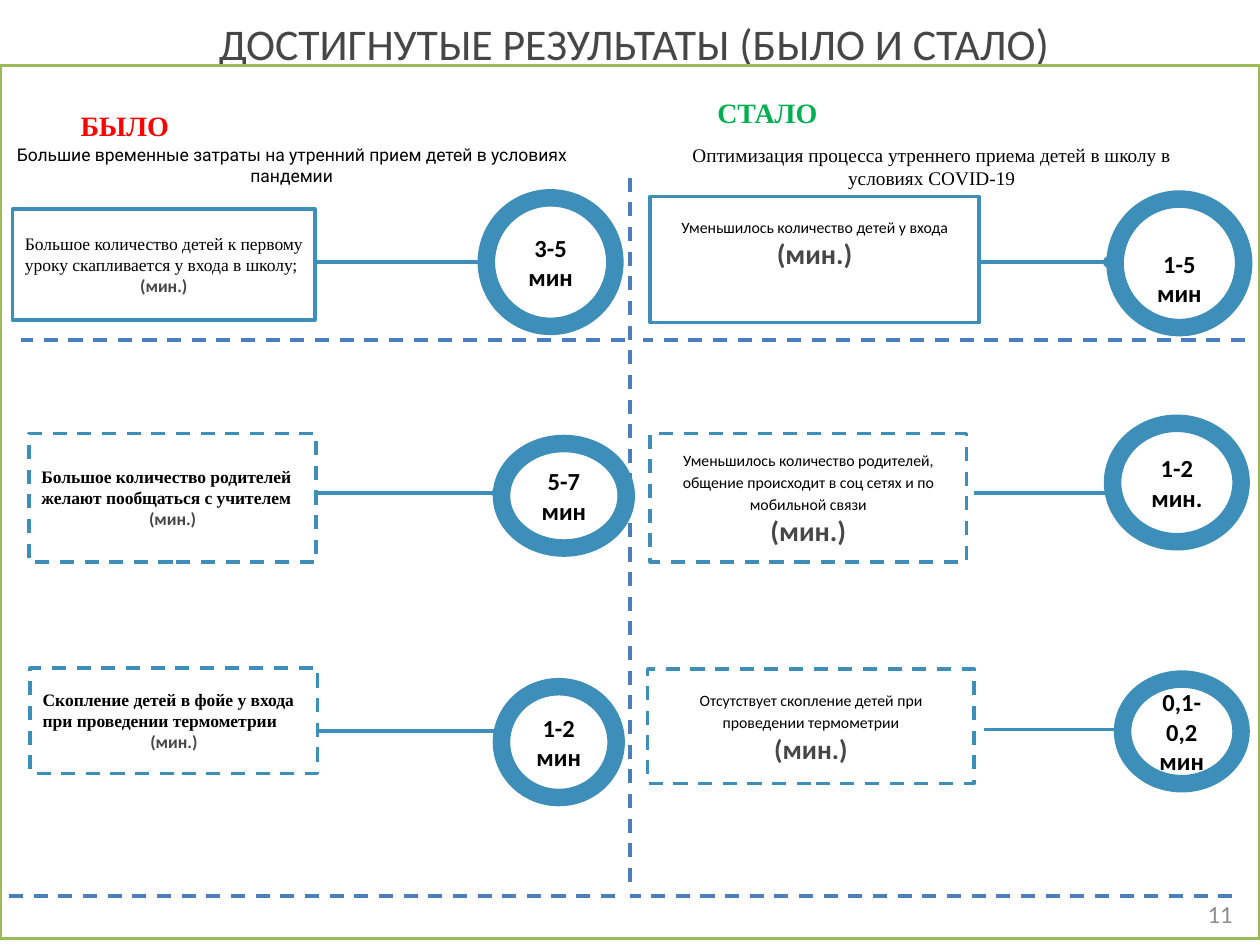
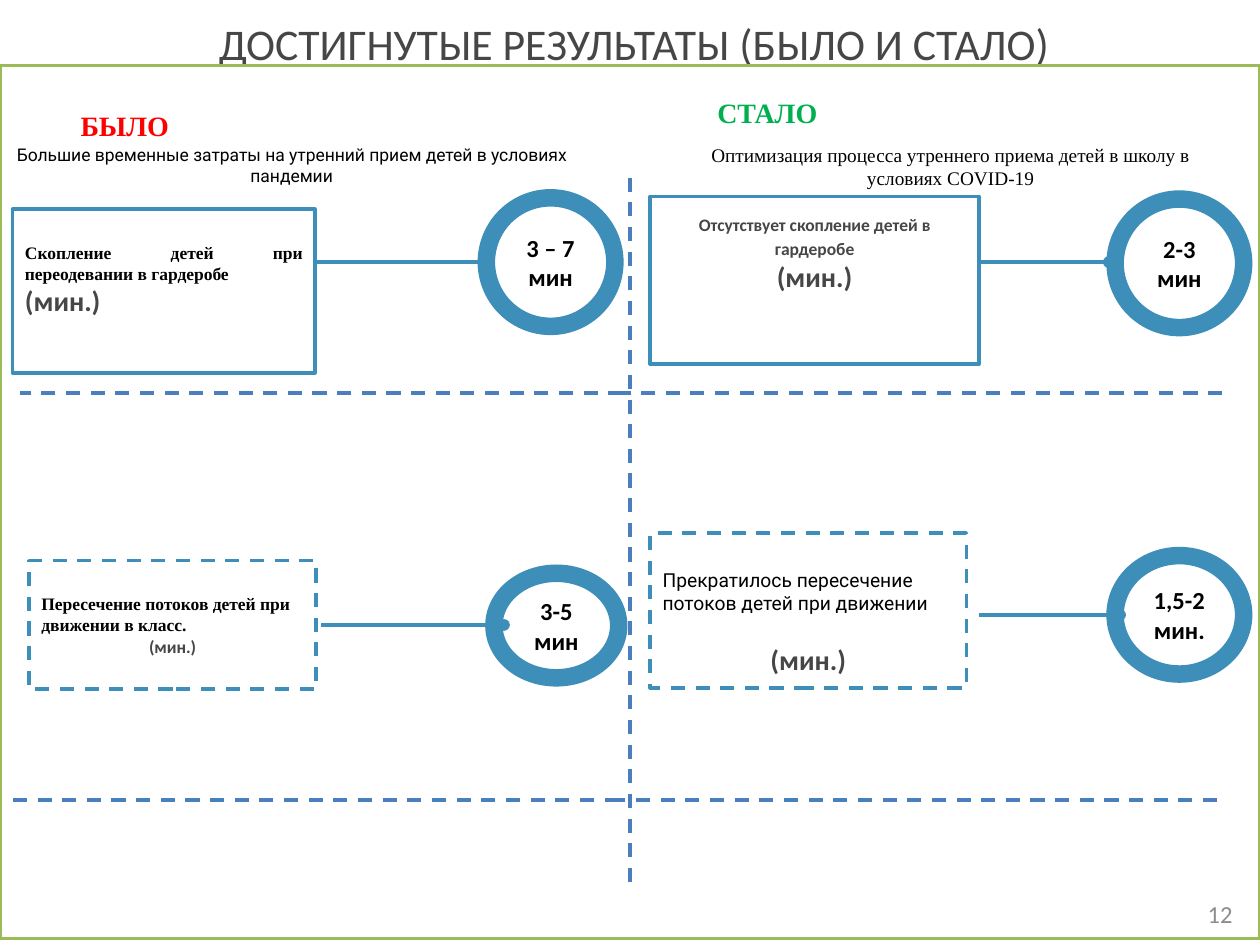
from dataclasses import dataclass, field

import pptx
import pptx.util
from lxml import etree
from pptx.dml.color import RGBColor
from pptx.enum.dml import MSO_LINE
from pptx.enum.shapes import MSO_CONNECTOR, MSO_SHAPE
from pptx.enum.text import MSO_ANCHOR, MSO_AUTO_SIZE, PP_ALIGN
from pptx.oxml.ns import qn

Inches = pptx.util.Inches
Pt = pptx.util.Pt

WHITE = RGBColor(0xFF, 0xFF, 0xFF)
BLACK = RGBColor(0x00, 0x00, 0x00)
DARK = RGBColor(0x46, 0x46, 0x46)
GREY = RGBColor(0x8C, 0x8C, 0x8C)
BLUE = RGBColor(0x3D, 0x8E, 0xB9)
DIVIDER = RGBColor(0x4B, 0x7E, 0xBC)
FRAME = RGBColor(0x9B, 0xBB, 0x59)
RED = RGBColor(0xFF, 0x00, 0x00)
GREEN = RGBColor(0x00, 0xB0, 0x50)

SANS = "Calibri"
SERIF = "Times New Roman"
ROBOTO = "Roboto"

TITLE = "ДОСТИГНУТЫЕ РЕЗУЛЬТАТЫ (БЫЛО И СТАЛО)"
BEFORE_NOTE = "Большие временные затраты на утренний прием детей в условиях пандемии"
AFTER_NOTE = "Оптимизация процесса утреннего приема детей в школу в условиях COVID-19"
UNIT = "(мин.)"

SERIF_BOLD = dict(size=10, font=SERIF, bold=True)
SMALL = dict(size=9, align=PP_ALIGN.CENTER, spacing=1.15)
UNIT_SMALL = dict(size=10, color=DARK, bold=True, align=PP_ALIGN.CENTER)
UNIT_LARGE = dict(UNIT_SMALL, size=16)


@dataclass
class Step:
    """Boxes are left, top, width, height; link is start, end, top."""
    card: tuple
    link: tuple
    ring: tuple
    text: str
    time: str
    style: dict
    unit: dict = field(default_factory=lambda: UNIT_LARGE)
    pad_top: float = 0
    pad_bottom: float = 0
    ring_pad: float = 0
    first: bool = False


def write(frame, text, size=10, font=SANS, color=BLACK, bold=False,
          align=PP_ALIGN.LEFT, spacing=None, before=0):
    for line in text.split("\n"):
        para = frame.add_paragraph() if frame.text else frame.paragraphs[0]
        para.alignment = align
        para.space_before = Pt(before)
        if spacing:
            para.line_spacing = spacing
        span = para.add_run()
        span.text = line
        span.font.size = Pt(size)
        span.font.name = font
        span.font.bold = bold
        span.font.color.rgb = color


def set_frame(shape, anchor=MSO_ANCHOR.MIDDLE, pad_top=0, pad_bottom=0):
    frame = shape.text_frame
    frame.word_wrap = True
    frame.vertical_anchor = anchor
    frame.margin_left = frame.margin_right = Inches(0.1)
    frame.margin_top = Inches(0.05 + pad_top)
    frame.margin_bottom = Inches(0.05 + pad_bottom)
    return frame


def add_label(page, box, text, anchor=MSO_ANCHOR.MIDDLE, grow=False, **style):
    label = page.shapes.add_textbox(*map(Inches, box))
    frame = set_frame(label, anchor)
    write(frame, text, **style)
    if grow:
        frame.auto_size = MSO_AUTO_SIZE.SHAPE_TO_FIT_TEXT


def add_outline(page, kind, box, color, width, fill=None, dashed=False):
    shape = page.shapes.add_shape(kind, *map(Inches, box))
    shape.shadow.inherit = False
    if fill is None:
        shape.fill.background()
    else:
        shape.fill.solid()
        shape.fill.fore_color.rgb = fill
    shape.line.color.rgb = color
    shape.line.width = Pt(width)
    if dashed:
        shape.line.dash_style = MSO_LINE.DASH
    return shape


def add_line(page, start, end, color, width, dashed=False, oval=False):
    line = page.shapes.add_connector(
        MSO_CONNECTOR.STRAIGHT, *map(Inches, start + end))
    line.line.color.rgb = color
    line.line.width = Pt(width)
    if dashed:
        line.line.dash_style = MSO_LINE.DASH
    if oval:
        etree.SubElement(line.line._get_or_add_ln(), qn("a:tailEnd"), type="oval")
    etree.SubElement(line._element.spPr, qn("a:effectLst"))


def add_step(page, left, top, step):
    def shift(box):
        return (left + box[0], top + box[1]) + box[2:]

    ring = add_outline(page, MSO_SHAPE.FLOWCHART_CONNECTOR, shift(step.ring),
                       BLUE, 10, fill=WHITE)
    write(set_frame(ring, pad_top=step.ring_pad), step.time, size=14, bold=True,
          align=PP_ALIGN.CENTER)
    start, end, height = step.link
    add_line(page, shift((start, height)), shift((end, height)), BLUE, 2.25, oval=True)
    card = add_outline(page, MSO_SHAPE.RECTANGLE, shift(step.card), BLUE, 2,
                       fill=WHITE if step.first else None, dashed=not step.first)
    frame = set_frame(card, pad_top=step.pad_top, pad_bottom=step.pad_bottom)
    write(frame, step.text, **step.style)
    write(frame, UNIT, **step.unit)


def add_heading(page, box, text, color):
    add_label(page, box, text, MSO_ANCHOR.TOP, True, size=16, font=SERIF,
              color=color, bold=True, align=PP_ALIGN.CENTER)


def add_note(page, box, text, size, font):
    add_label(page, box, text, MSO_ANCHOR.TOP, True, size=size, font=font,
              align=PP_ALIGN.CENTER)


def add_dividers(page, dividers):
    add_line(page, (5, 1.41), (5, 7.07), DIVIDER, 2, dashed=True)
    for right, left, top in dividers:
        add_line(page, (right, top), (left, top), DIVIDER, 2, dashed=True)


def build_results(deck, number, note_left, dividers, rows):
    page = deck.slides.add_slide(deck.slide_layouts[6])
    add_dividers(page, dividers)
    add_label(page, (0.08, -0.08, 9.9, 0.84), TITLE, size=25, color=DARK,
              align=PP_ALIGN.CENTER)
    for top, before, after in rows:
        add_step(page, 0, top, before)
        add_step(page, 5, top, after)
    add_outline(page, MSO_SHAPE.RECTANGLE, (0, 0.52, 10, 6.93), FRAME, 2)
    add_label(page, (9.4, 7.05, 0.48, 0.4), str(number), size=14, color=GREY,
              align=PP_ALIGN.RIGHT)
    add_heading(page, (0.27, 0.81, 1.44, 0.37), "БЫЛО", RED)
    add_heading(page, (5.39, 0.71, 1.4, 0.37), "СТАЛО", GREEN)
    add_note(page, (0, 1.09, 4.63, 0.44), BEFORE_NOTE, 10, ROBOTO)
    add_note(page, (note_left, 1.09, 4.63, 0.47), AFTER_NOTE, 11, SERIF)


FIRST_BEFORE = dict(link=(2.43, 3.86, 0.58), ring=(3.86, 0.07, 1.02, 1.02), first=True)
FIRST_AFTER = dict(link=(2.67, 3.8, 0.58), ring=(3.85, 0.08, 1.02, 1.02), first=True)

ARRIVAL_ROWS = [
    (1.5,
     Step(card=(0.1, 0.16, 2.4, 0.88), time="3-5\nмин",
          text="Большое количество детей к первому уроку скапливается у входа в школу;",
          style=dict(size=10, font=SERIF), unit=UNIT_SMALL, **FIRST_BEFORE),
     Step(card=(0.16, 0.06, 2.61, 1), time="1-5\nмин",
          text="Уменьшилось количество детей у входа",
          style=SMALL, pad_bottom=0.27, ring_pad=0.24, **FIRST_AFTER)),
    (3.3,
     Step(card=(0.23, 0.14, 2.28, 1.02), link=(2.5, 3.95, 0.61),
          ring=(3.98, 0.22, 0.99, 0.83), time="5-7 мин",
          text="Большое количество родителей желают пообщаться с учителем",
          style=SERIF_BOLD, unit=UNIT_SMALL),
     Step(card=(0.16, 0.14, 2.51, 1.02), link=(2.73, 3.85, 0.61),
          ring=(3.83, 0.06, 1.02, 0.94), time="1-2\nмин.",
          text="Уменьшилось количество родителей, общение происходит "
               "в соц сетях и по мобильной связи",
          style=SMALL)),
    (5.2,
     Step(card=(0.24, 0.1, 2.28, 0.84), link=(2.52, 3.97, 0.6),
          ring=(3.98, 0.25, 0.91, 0.88), time="1-2\nмин",
          text="Скопление детей в фойе у входа при проведении термометрии",
          style=SERIF_BOLD, unit=UNIT_SMALL),
     Step(card=(0.14, 0.11, 2.59, 0.91), link=(2.81, 3.92, 0.59),
          ring=(3.91, 0.19, 0.94, 0.83), time="0,1-0,2\nмин",
          text="Отсутствует скопление детей при проведении термометрии",
          style=SMALL, unit=dict(UNIT_LARGE, size=15.5))),
]

CLOAKROOM_ROWS = [
    (1.5,
     Step(card=(0.1, 0.16, 2.4, 1.3), time="3 – 7 мин",
          text="Скопление детей при переодевании в гардеробе",
          style=dict(SERIF_BOLD, align=PP_ALIGN.JUSTIFY),
          unit=dict(UNIT_LARGE, align=PP_ALIGN.JUSTIFY),
          pad_bottom=0.18, **FIRST_BEFORE),
     Step(card=(0.16, 0.06, 2.61, 1.33), time="2-3\nмин",
          text="Отсутствует скопление детей в гардеробе",
          style=dict(UNIT_SMALL, spacing=1.15), pad_bottom=0.45, **FIRST_AFTER)),
    (4.2,
     Step(card=(0.23, 0.25, 2.28, 1.02), link=(2.55, 4, 0.76),
          ring=(3.92, 0.35, 0.99, 0.83), time="3-5 мин",
          text="Пересечение потоков детей при движении в класс.",
          style=SERIF_BOLD, unit=UNIT_SMALL),
     Step(card=(0.16, 0.03, 2.51, 1.23), link=(2.77, 3.89, 0.68),
          ring=(3.85, 0.21, 1.02, 0.94), time="1,5-2\nмин.",
          text="Прекратилось пересечение потоков детей при движении",
          style=dict(size=11, font=ROBOTO), unit=dict(UNIT_LARGE, before=16),
          pad_top=0.18)),
]


def main():
    deck = pptx.Presentation()
    deck.slide_width = Inches(10)
    deck.slide_height = Inches(7.5)
    build_results(deck, 11, 5.08,
                  [(4.96, 0.17, 2.7), (9.88, 5.1, 2.7),
                   (4.88, 0, 7.11), (9.78, 5, 7.11)],
                  ARRIVAL_ROWS)
    build_results(deck, 12, 5.23,
                  [(4.94, 0.16, 3.12), (9.7, 4.92, 3.12),
                   (4.91, 0.03, 6.35), (9.66, 4.88, 6.35)],
                  CLOAKROOM_ROWS)
    deck.save("out.pptx")


if __name__ == "__main__":
    main()
